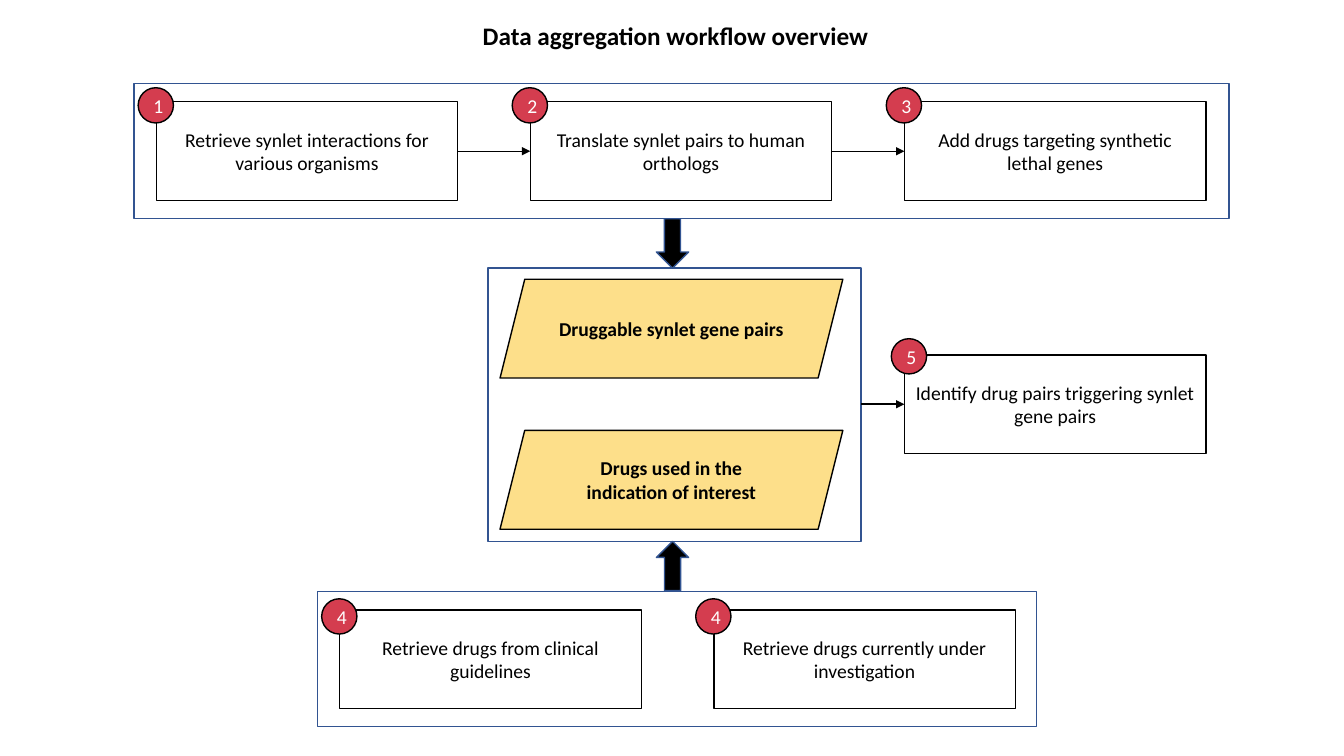
import pptx
import pptx.util
import pptx.dml.color
import pptx.enum.shapes
import pptx.enum.text
import pptx.oxml.ns
import lxml.etree

Inches = pptx.util.Inches
SHAPE = pptx.enum.shapes.MSO_SHAPE
BLACK, WHITE, NAVY = "000000", "FFFFFF", "325491"
RED, YELLOW = "D43D4F", "FDDF8A"
STEP_W, STEP_H, STEP_PITCH = 2.99, 0.98, 3.71
PANEL_H, BADGE = 1.34, 0.35


def rgb(value):
    return pptx.dml.color.RGBColor.from_string(value)


def write(shape, text, size, color, bold=False):
    tf = shape.text_frame
    tf.text = text
    tf.vertical_anchor = pptx.enum.text.MSO_ANCHOR.MIDDLE
    for p in tf.paragraphs:
        p.alignment = pptx.enum.text.PP_ALIGN.CENTER
        for r in p.runs:
            r.font.name = "Calibri"
            r.font.size = pptx.util.Pt(size)
            r.font.bold = bold
            r.font.color.rgb = rgb(color)


def add_box(s, kind, x, y, w, h, fill=None, line=BLACK):
    sp = s.shapes.add_shape(kind, Inches(x), Inches(y), Inches(w), Inches(h))
    sp.shadow.inherit = False
    if fill:
        sp.fill.solid()
        sp.fill.fore_color.rgb = rgb(fill)
    else:
        sp.fill.background()
    sp.line.color.rgb = rgb(line)
    sp.line.width = pptx.util.Pt(1)
    return sp


def add_arrow(s, x1, x2, y):
    cn = s.shapes.add_connector(pptx.enum.shapes.MSO_CONNECTOR.STRAIGHT,
                                Inches(x1), Inches(y), Inches(x2), Inches(y))
    cn.line.color.rgb = rgb(BLACK)
    cn.line.width = pptx.util.Pt(1)
    qn = pptx.oxml.ns.qn
    lxml.etree.SubElement(cn.line._get_or_add_ln(), qn("a:tailEnd"), type="triangle")
    lxml.etree.SubElement(cn._element.spPr, qn("a:effectLst"))


def add_block_arrow(s, y, rotation=0):
    sp = add_box(s, SHAPE.DOWN_ARROW, 6.51, y, 0.32, 0.49, BLACK, NAVY)
    sp.rotation = rotation


def add_step(s, x, y, number, text, badge_dx, badge_dy):
    """One numbered process box with its badge on the top left corner."""
    write(add_box(s, SHAPE.RECTANGLE, x, y, STEP_W, STEP_H), text, 14, BLACK)
    badge = add_box(s, SHAPE.OVAL, x + badge_dx, y + badge_dy, BADGE, BADGE, RED)
    write(badge, number, 14, WHITE)
    tf = badge.text_frame
    tf.margin_left, tf.margin_right = Inches(0.05), Inches(0)
    tf.margin_top = tf.margin_bottom = Inches(0)


def add_panel(s, x, y, w, steps, badge_dy, linked=False):
    """Framed row of steps, joined by arrows when linked."""
    add_box(s, SHAPE.RECTANGLE, x, y, w, PANEL_H, line=NAVY)
    top = y + 0.18
    for i, (number, text) in enumerate(steps):
        left = x + 0.22 + i * STEP_PITCH
        if linked and i:
            add_arrow(s, left - STEP_PITCH + STEP_W, left, top + STEP_H / 2)
        add_step(s, left, top, number, text, -0.18, badge_dy)


def add_results(s, x, y, w, h, results):
    """Framed column of data parallelograms."""
    add_box(s, SHAPE.RECTANGLE, x, y, w, h, line=NAVY)
    for i, text in enumerate(results):
        sp = add_box(s, SHAPE.PARALLELOGRAM, x + 0.12, y + 0.11 + i * 1.5,
                     3.4, STEP_H, YELLOW)
        write(sp, text, 14, BLACK, bold=True)


def add_title(s, x, y, w, h, text):
    title = s.shapes.title
    title.left, title.top = Inches(x), Inches(y)
    title.width, title.height = Inches(w), Inches(h)
    write(title, text, 18, BLACK, bold=True)
    title.text_frame.word_wrap = False
    title.text_frame.auto_size = pptx.enum.text.MSO_AUTO_SIZE.NONE


def main():
    prs = pptx.Presentation()
    prs.slide_width, prs.slide_height = Inches(13.33), Inches(7.5)
    s = prs.slides.add_slide(prs.slide_layouts.get_by_name("Title Only"))
    add_title(s, 4.67, 0.15, 4.06, 0.4, "Data aggregation workflow overview")

    # Synthetic lethality steps
    add_panel(s, 1.33, 0.83, 10.86, [
        ("1", "Retrieve synlet interactions for various organisms"),
        ("2", "Translate synlet pairs to human orthologs"),
        ("3", "Add drugs targeting synthetic lethal genes"),
    ], badge_dy=-0.14, linked=True)

    # Drug retrieval steps
    add_panel(s, 3.15, 5.87, 7.13, [
        ("4", "Retrieve drugs from clinical guidelines"),
        ("4", "Retrieve drugs currently under investigation"),
    ], badge_dy=-0.11)

    # Collected data, fed from above and below
    add_results(s, 4.84, 2.66, 3.7, 2.71, [
        "Druggable synlet gene pairs",
        "Drugs used in the\nindication of interest",
    ])
    add_block_arrow(s, 2.17)
    add_block_arrow(s, 5.37, rotation=180)

    # Final step
    add_arrow(s, 8.54, 8.97, 4.01)
    add_step(s, 8.97, 3.52, "5", "Identify drug pairs triggering synlet gene pairs",
             -0.13, -0.16)

    prs.save("out.pptx")


if __name__ == "__main__":
    main()
